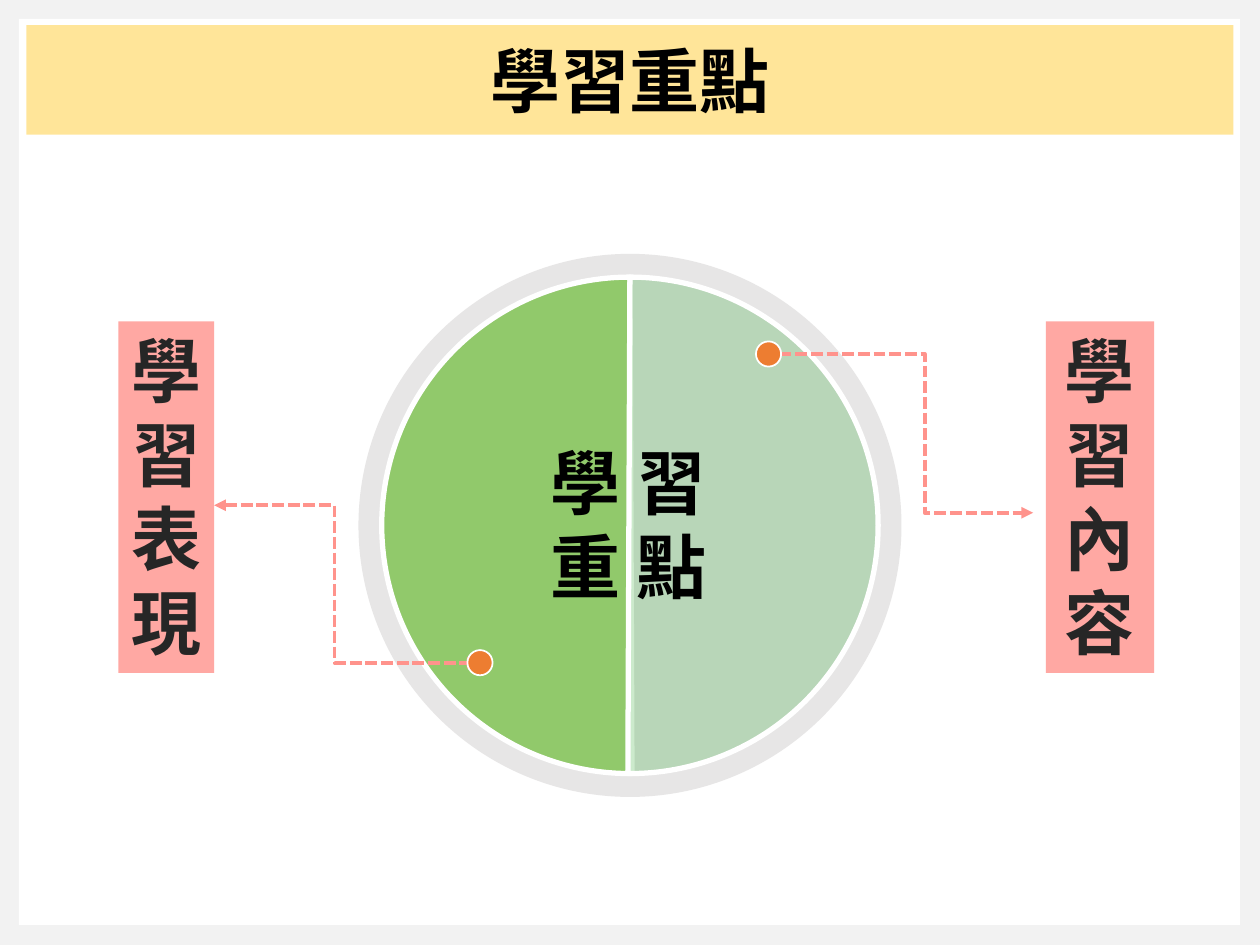
from lxml.etree import SubElement
from pptx import Presentation
from pptx.dml.color import RGBColor
from pptx.enum.dml import MSO_LINE
from pptx.enum.shapes import MSO_CONNECTOR, MSO_SHAPE as Preset
from pptx.enum.text import MSO_ANCHOR, MSO_AUTO_SIZE as AutoSize, PP_ALIGN
from pptx.oxml.ns import qn
from pptx.util import Inches, Pt

WIDTH, HEIGHT = 10, 7.5
FONT, SIZE = "Noto Sans CJK SC", 40
COLORS = {
    "backdrop": "F2F2F2", "white": "FFFFFF", "ring": "E7E6E6", "banner": "FFC000",
    "left": "6DBD37", "right": "009900", "pink": "FF938C", "dot": "ED7D31",
    "black": "000000", "label": "262626",
}

TITLE = "學習重點"
CENTER_LINES = ["學 習", "重 點"]
CENTER_X, CENTER_Y = WIDTH / 2, 4.17
RING, DISC, DOT = 4.31, 3.94, 0.2
HALVES = [("left", 70, False), ("right", 20, True)]  # color, opacity, mirrored
LABELS = [("學習內容", 8.3, 0.86), ("學習表現", 0.94, 0.76)]  # text, left, width
LABEL_TOP, LABEL_HEIGHT = 2.55, 2.79
# start, end, position of the bend, dot centre
LINKS = [
    ((6.1, 2.81), (8.2, 4.07), 0.59, (6.1, 2.81)),
    ((1.7, 4.01), (3.8, 5.26), 0.455, (3.81, 5.26)),
]


def rgb(name):
    return RGBColor.from_string(COLORS[name])


def add_part(preset, box, color, opacity=100, outline=0):
    part = slide.shapes.add_shape(preset, *map(Inches, box))
    part.shadow.inherit = False
    part.fill.solid()
    part.fill.fore_color.rgb = rgb(color)
    if opacity < 100:
        tint = part._element.spPr.find(qn("a:solidFill"))[0]
        SubElement(tint, qn("a:alpha"), val=str(opacity * 1000))
    if outline:
        part.line.color.rgb = rgb("white")
        part.line.width = Pt(outline)
    else:
        part.line.fill.background()
    return part


def centered(size, x=CENTER_X, y=CENTER_Y):
    return x - size / 2, y - size / 2, size, size


def write(part, lines, color, align):
    frame = part.text_frame
    for i, line in enumerate(lines):
        paragraph = frame.add_paragraph() if i else frame.paragraphs[0]
        paragraph.alignment = align
        run = paragraph.add_run()
        run.text = line
        run.font.size, run.font.bold, run.font.name = Pt(SIZE), True, FONT
        run.font.color.rgb = rgb(color)
        SubElement(run.font._element, qn("a:ea"), typeface=FONT)
    return frame


def add_link(start, end, bend):
    """Dashed elbow line with an arrowhead at both ends."""
    link = slide.shapes.add_connector(MSO_CONNECTOR.ELBOW, *map(Inches, start + end))
    link.line.color.rgb = rgb("pink")
    link.line.width = Pt(2.25)
    link.line.dash_style = MSO_LINE.SQUARE_DOT
    properties = link._element.spPr
    for tip in ("a:headEnd", "a:tailEnd"):
        SubElement(properties.find(qn("a:ln")), qn(tip), type="triangle")
    SubElement(properties, qn("a:effectLst"))
    guides = properties.find(qn("a:prstGeom")).find(qn("a:avLst"))
    SubElement(guides, qn("a:gd"), name="adj1", fmla=f"val {round(bend * 100000)}")


deck = Presentation()
deck.slide_width, deck.slide_height = Inches(WIDTH), Inches(HEIGHT)
slide = deck.slides.add_slide(deck.slide_layouts[6])
slide.background.fill.solid()
slide.background.fill.fore_color.rgb = rgb("backdrop")

add_part(Preset.RECTANGLE, (0.15, 0.15, 9.69, 7.19), "white")
add_part(Preset.FLOWCHART_CONNECTOR, centered(RING), "ring")
banner = add_part(Preset.RECTANGLE, (0.21, 0.2, 9.58, 0.87), "banner", 40)
write(banner, [TITLE], "black", PP_ALIGN.CENTER).vertical_anchor = MSO_ANCHOR.MIDDLE

for color, opacity, mirrored in HALVES:
    half = add_part(Preset.CHORD, centered(DISC), color, opacity, 3)
    half.adjustments[0], half.adjustments[1] = 53.718, 162
    if mirrored:
        half._element.spPr.find(qn("a:xfrm")).set("flipH", "1")

center = slide.shapes.add_textbox(*map(Inches, (4.27, 3.44, 1.46, 1.45)))
center_frame = write(center, CENTER_LINES, "black", PP_ALIGN.LEFT)
center_frame.word_wrap = False
center_frame.auto_size = AutoSize.SHAPE_TO_FIT_TEXT

for start, end, bend, _ in LINKS:
    add_link(start, end, bend)
for *_, dot in LINKS:
    add_part(Preset.FLOWCHART_CONNECTOR, centered(DOT, *dot), "dot", outline=1)

for text, left, width in LABELS:
    label = add_part(Preset.RECTANGLE, (left, LABEL_TOP, width, LABEL_HEIGHT), "pink", 80)
    label_frame = write(label, [text], "label", PP_ALIGN.CENTER)
    label_frame.word_wrap = True
    label_frame.vertical_anchor = MSO_ANCHOR.TOP
    label_frame.auto_size = AutoSize.SHAPE_TO_FIT_TEXT

deck.save("out.pptx")
